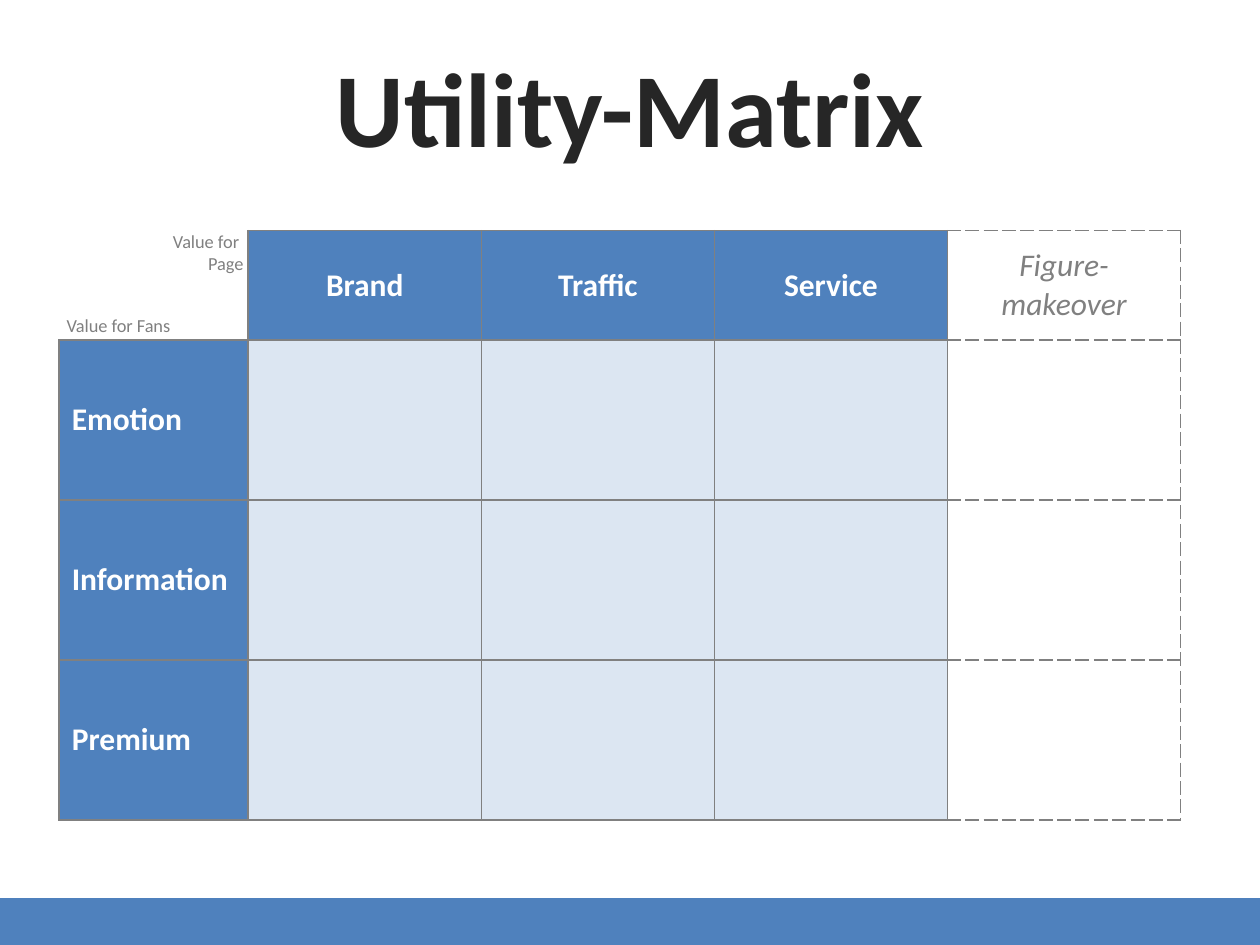
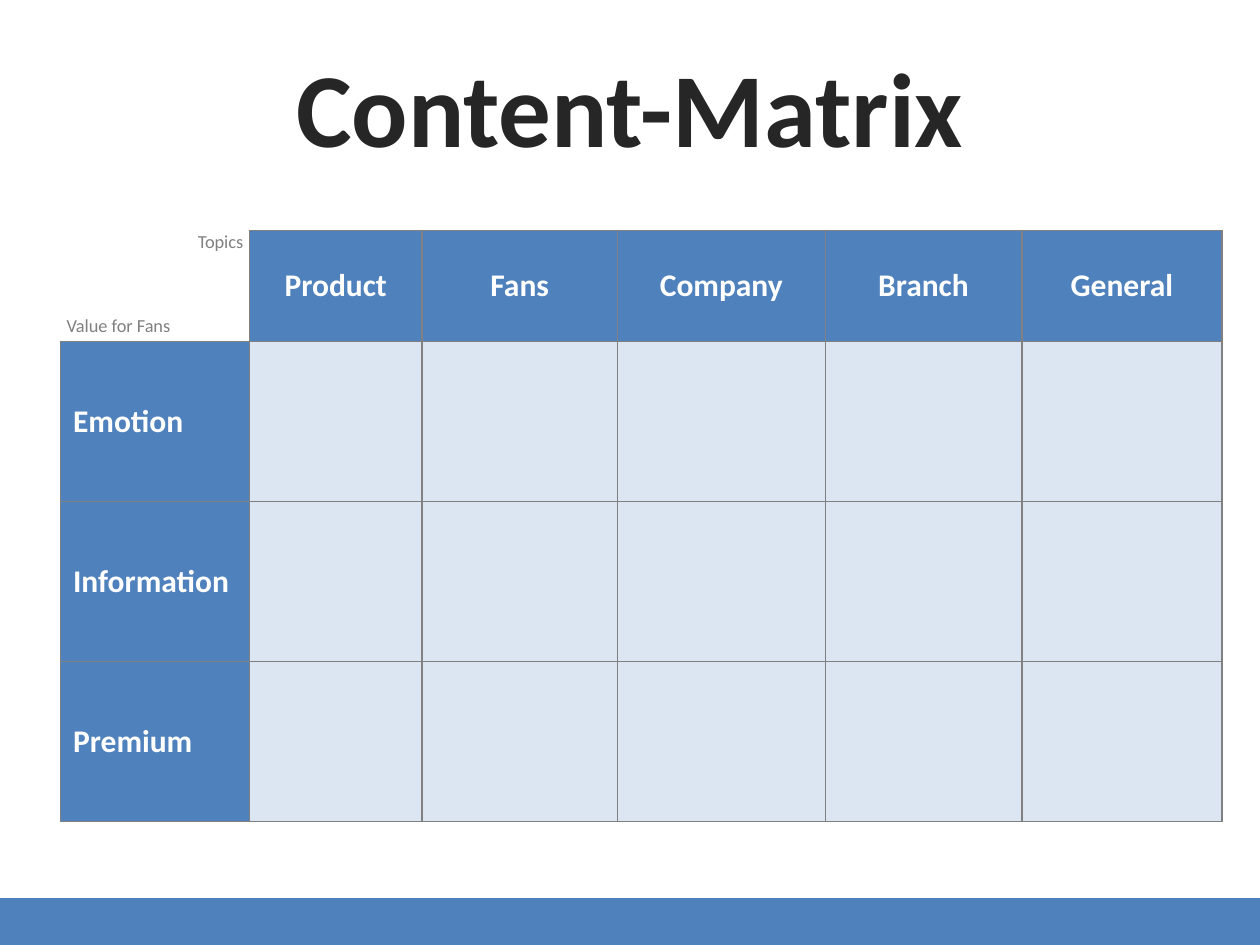
from dataclasses import dataclass
from typing import Optional

from lxml.etree import SubElement
from pptx import Presentation
from pptx.dml.color import RGBColor
from pptx.enum.shapes import MSO_SHAPE
from pptx.enum.text import MSO_ANCHOR, MSO_AUTO_SIZE, PP_ALIGN
from pptx.oxml import parse_xml
from pptx.oxml.ns import nsdecls, qn
from pptx.util import Inches, Pt

# Shared look
COLORS = {
    "blue": "4F81BD",
    "pale": "DCE6F2",
    "grey": "808080",
    "white": "FFFFFF",
    "dark": "262626",
}
TITLE = {"name": "Calibri", "size": Pt(60), "bold": True}
HEADING = {"name": "Calibri", "size": Pt(18), "bold": True}
OPTIONAL = {"name": "Calibri", "size": Pt(18), "bold": False, "italic": True}
AXIS = {"name": "Calibri", "size": Pt(10.5)}

FAN_VALUES = ["Emotion", "Information", "Premium"]
LABEL_WIDTH = 1.5
ROW_HEIGHT = 1.27
TABLE_TOP = 1.83
TITLE_ONLY = 5


@dataclass
class AxisLabel:
    text: str
    left: float
    top: float
    width: float
    height: float
    align: PP_ALIGN = PP_ALIGN.LEFT


@dataclass
class Matrix:
    title: str
    left: float
    header_height: float
    headings: list[str]
    widths: list[float]
    column_label: AxisLabel
    optional_column: Optional[int] = None


ROW_LABEL = AxisLabel("Value for Fans", 0.43, 2.44, 1.07, 0.28)
MATRICES = [
    Matrix("Utility-Matrix", 0.47, 0.87,
           ["Brand", "Traffic", "Service", "Figure-makeover"], [1.85] * 4,
           AxisLabel("Value for \vPage", 1.25, 1.78, 0.78, 0.45, PP_ALIGN.RIGHT),
           optional_column=4),
    Matrix("Content-Matrix", 0.48, 0.88,
           ["Product", "Fans", "Company", "Branch", "General"],
           [1.37, 1.55, 1.65, 1.56, 1.59],
           AxisLabel("Topics", 1.45, 1.78, 0.58, 0.28, PP_ALIGN.RIGHT)),
]


def rgb(name: str) -> RGBColor:
    return RGBColor.from_string(COLORS[name])


def write(tf, text: str, style: dict, color: str, align: PP_ALIGN) -> None:
    """Fill a text frame with one formatted paragraph."""
    tf.text = text
    p = tf.paragraphs[0]
    p.alignment = align
    for r in p.runs:
        for attr, value in style.items():
            setattr(r.font, attr, value)
        r.font.color.rgb = rgb(color)


def set_borders(cell, sides: dict[str, Optional[str]]) -> None:
    """Give each side a dash style, or None for no line."""
    tc_pr = cell._tc.get_or_add_tcPr()
    for i, side in enumerate("LRTB"):
        ln = parse_xml(f'<a:ln{side} {nsdecls("a")} w="{Pt(1)}"/>')
        dash = sides[side]
        if dash is None:
            SubElement(ln, qn("a:noFill"))
        else:
            fill = SubElement(ln, qn("a:solidFill"))
            SubElement(fill, qn("a:srgbClr"), val=COLORS["grey"])
            SubElement(ln, qn("a:prstDash"), val=dash)
        tc_pr.insert(i, ln)


def add_title(s, text: str) -> None:
    title = s.shapes.title
    title.left, title.top = Inches(0), Inches(0.29)
    title.width, title.height = Inches(10), Inches(1.11)
    tf = title.text_frame
    write(tf, text, TITLE, "dark", PP_ALIGN.CENTER)
    tf.auto_size = MSO_AUTO_SIZE.NONE
    tf.vertical_anchor = MSO_ANCHOR.TOP


def add_band(s) -> None:
    band = s.shapes.add_shape(MSO_SHAPE.RECTANGLE, Inches(0), Inches(7.14),
                              Inches(10), Inches(0.36))
    band.shadow.inherit = False
    band.fill.solid()
    band.fill.fore_color.rgb = rgb("blue")
    band.line.color.rgb = rgb("blue")
    band.line.width = Pt(2)


def add_axis_label(s, label: AxisLabel) -> None:
    box = s.shapes.add_textbox(Inches(label.left), Inches(label.top),
                               Inches(label.width), Inches(label.height))
    tf = box.text_frame
    write(tf, label.text, AXIS, "grey", label.align)
    tf.word_wrap = False
    tf.auto_size = MSO_AUTO_SIZE.SHAPE_TO_FIT_TEXT


def format_cell(cell, row: int, col: int, matrix: Matrix) -> None:
    """Style a cell by its place: corner, heading, optional column or body."""
    corner = row == col == 0
    optional = col == matrix.optional_column
    heading = row == 0 or col == 0

    if corner or optional:
        cell.fill.background()
    else:
        cell.fill.solid()
        cell.fill.fore_color.rgb = rgb("blue" if heading else "pale")

    sides = dict.fromkeys("LRTB", "solid")
    if corner:
        sides.update(L=None, T=None)
    elif optional:
        sides.update(R="dash", T="dash", B="dash")
    set_borders(cell, sides)

    if heading and not corner:
        text = matrix.headings[col - 1] if row == 0 else FAN_VALUES[row - 1]
        style, color = (OPTIONAL, "grey") if optional else (HEADING, "white")
        align = PP_ALIGN.CENTER if row == 0 else PP_ALIGN.LEFT
        write(cell.text_frame, text, style, color, align)
        cell.vertical_anchor = MSO_ANCHOR.MIDDLE


def add_matrix(s, matrix: Matrix) -> None:
    widths = [LABEL_WIDTH, *matrix.widths]
    heights = [matrix.header_height] + [ROW_HEIGHT] * len(FAN_VALUES)
    table = s.shapes.add_table(
        len(heights), len(widths), Inches(matrix.left), Inches(TABLE_TOP),
        Inches(sum(widths)), Inches(sum(heights))).table
    table.first_row = table.horz_banding = False
    for column, width in zip(table.columns, widths):
        column.width = Inches(width)
    for row, height in zip(table.rows, heights):
        row.height = Inches(height)
    for i in range(len(heights)):
        for j in range(len(widths)):
            format_cell(table.cell(i, j), i, j, matrix)


def main() -> None:
    prs = Presentation()
    prs.slide_width, prs.slide_height = Inches(10), Inches(7.5)
    for matrix in MATRICES:
        s = prs.slides.add_slide(prs.slide_layouts[TITLE_ONLY])
        add_band(s)
        add_matrix(s, matrix)
        add_title(s, matrix.title)
        add_axis_label(s, matrix.column_label)
        add_axis_label(s, ROW_LABEL)
    prs.save("out.pptx")


if __name__ == "__main__":
    main()
